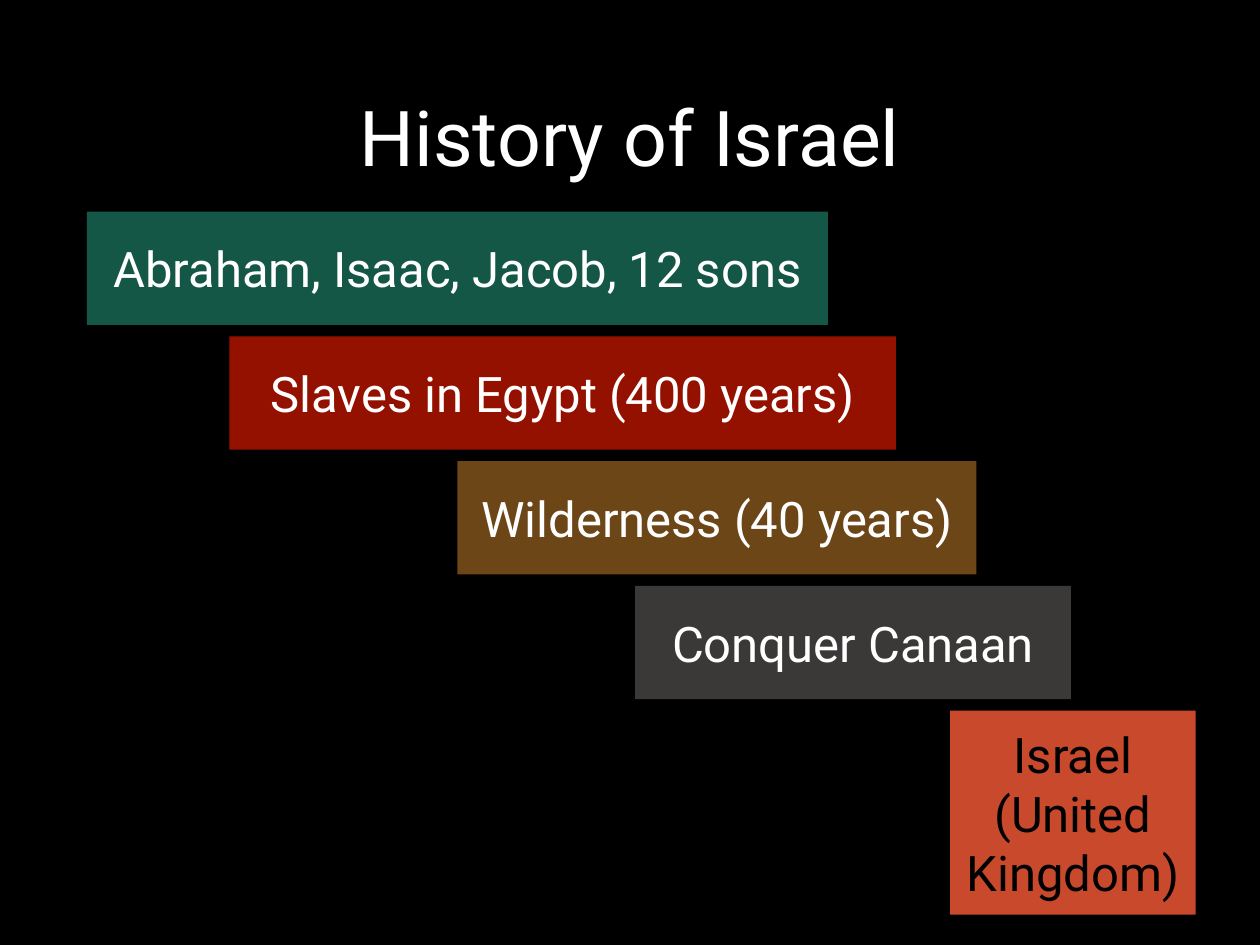
import pptx
import pptx.util
import pptx.dml.color
import pptx.enum.shapes
import pptx.enum.text

Inches = pptx.util.Inches
COLORS = {
    "background": "000000", "light": "FFFFFF", "dark": "000000",
    "green": "155746", "red": "941100", "brown": "6C4616",
    "grey": "3B3838", "orange": "C9492C",
}
FONT = "Roboto"
ROW_STEP, BAR_HEIGHT = 0.99, 0.9

# Text, left offset, width, height, fill, text colour; one era per row
ERAS = [
    ("Abraham, Isaac, Jacob, 12 sons", 0, 5.88, BAR_HEIGHT, "green", "light"),
    ("Slaves in Egypt (400 years)", 1.13, 5.29, BAR_HEIGHT, "red", "light"),
    ("Wilderness (40 years)", 2.94, 4.12, BAR_HEIGHT, "brown", "light"),
    ("Conquer Canaan", 4.35, 3.46, BAR_HEIGHT, "grey", "light"),
    ("Israel (United Kingdom)", 6.85, 1.95, 1.62, "orange", "dark"),
]


def rgb(name):
    return pptx.dml.color.RGBColor.from_string(COLORS[name])


def write(shape, text, size, color):
    tf = shape.text_frame
    tf.word_wrap = True
    tf.vertical_anchor = pptx.enum.text.MSO_ANCHOR.MIDDLE
    p = tf.paragraphs[0]
    p.text = text
    p.alignment = pptx.enum.text.PP_ALIGN.CENTER
    p.font.name = FONT
    p.font.size = pptx.util.Pt(size)
    p.font.color.rgb = rgb(color)
    return p


def add_title(s, left, top, width, height):
    box = s.shapes.add_textbox(*map(Inches, (left, top, width, height)))
    write(box, "History of Israel", 44, "light").line_spacing = 0.9


def add_timeline(s, left, top):
    """Stack the eras as bars stepping down to the right."""
    for row, (text, offset, width, height, fill, color) in enumerate(ERAS):
        box = (left + offset, top + row * ROW_STEP, width, height)
        sp = s.shapes.add_shape(
            pptx.enum.shapes.MSO_SHAPE.RECTANGLE, *map(Inches, box))
        sp.shadow.inherit = False
        sp.fill.solid()
        sp.fill.fore_color.rgb = rgb(fill)
        sp.line.fill.background()
        write(sp, text, 28, color)


def main():
    prs = pptx.Presentation()
    prs.slide_width, prs.slide_height = Inches(10), Inches(7.5)
    s = prs.slides.add_slide(prs.slide_layouts[6])
    s.background.fill.solid()
    s.background.fill.fore_color.rgb = rgb("background")

    # Heading and staircase of eras share the left margin
    margin = 0.69
    add_title(s, margin, 0.4, 10 - 2 * margin, 1.45)
    add_timeline(s, margin, 1.68)
    prs.save("out.pptx")


if __name__ == "__main__":
    main()
